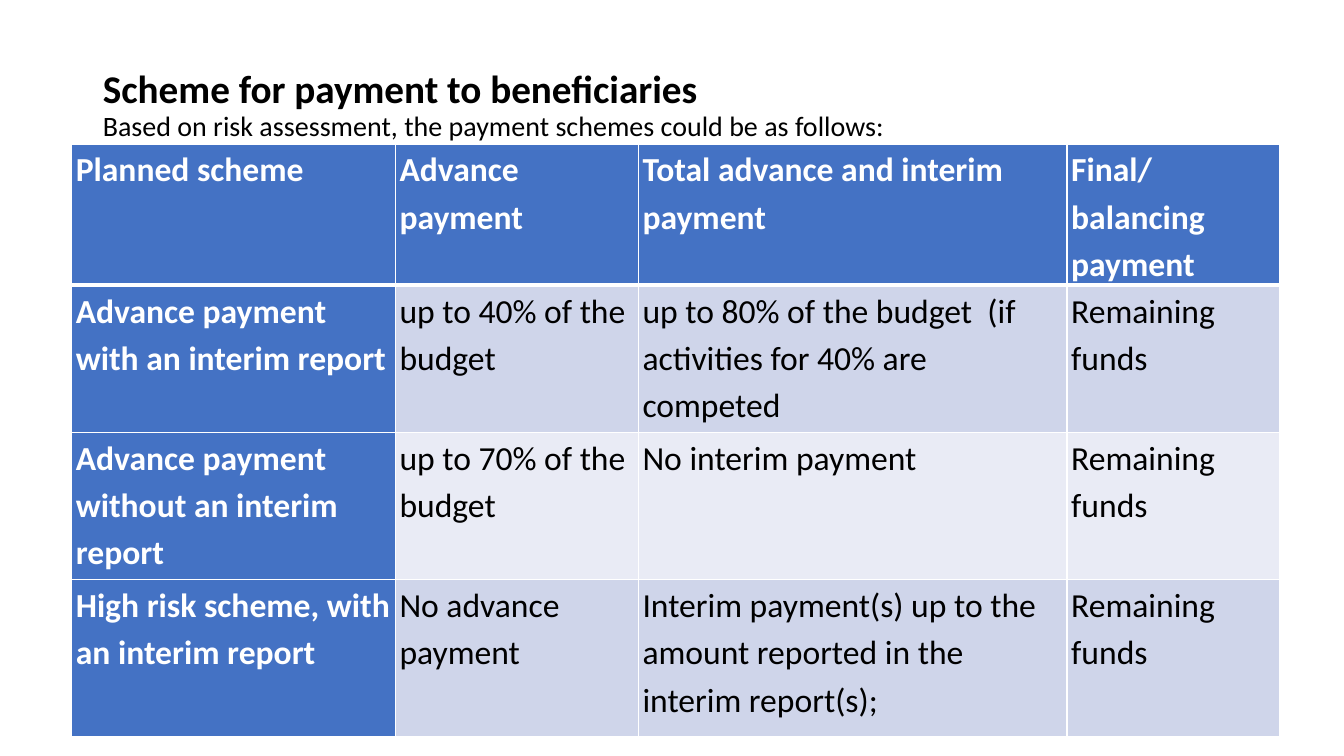
from lxml.etree import SubElement
from pptx import Presentation
from pptx.dml.color import RGBColor
from pptx.enum.text import MSO_ANCHOR as Anchor, MSO_AUTO_SIZE as AutoSize, PP_ALIGN as Align
from pptx.oxml.ns import qn
from pptx.util import Pt

WHITE, BLACK, BLUE = "FFFFFF", "000000", "4472C4"
BANDS = ["CFD5EA", "E9EBF5"]


def style(run, size, color, bold):
    run.font.name = "Calibri"
    run.font.size = Pt(size)
    run.font.bold = bold
    run.font.color.rgb = RGBColor.from_string(color)


def add_border(cell, side, width):
    line = SubElement(cell._tc.get_or_add_tcPr(), qn(f"a:ln{side}"), w=str(Pt(width)))
    fill = SubElement(line, qn("a:solidFill"))
    SubElement(fill, qn("a:srgbClr"), val=WHITE)


deck = Presentation()
deck.slide_width, deck.slide_height = Pt(960), Pt(540)
slide = deck.slides.add_slide(deck.slide_layouts[5])

# Heading and introduction
heading = slide.shapes.title
heading.left, heading.top, heading.width, heading.height = Pt(66.24), Pt(-183.6), Pt(828), Pt(519.12)
frame = heading.text_frame
frame.text = ("Scheme for payment to beneficiaries\v"
              "Based on risk assessment, the payment schemes could be as follows:")
frame.word_wrap = True
frame.auto_size = AutoSize.NONE
frame.vertical_anchor = Anchor.MIDDLE
frame.paragraphs[0].alignment = Align.LEFT
frame.paragraphs[0].line_spacing = 0.9
headline, introduction = frame.paragraphs[0].runs
style(headline, 28, BLACK, True)
style(introduction, 20, BLACK, False)

# Payment schemes
schemes = [
    ["Planned scheme", "Advance payment", "Total advance and interim payment",
     "Final/balancing payment"],
    ["Advance payment with an interim report", "up to 40% of the budget",
     "up to 80% of the budget  (if activities for 40% are competed", "Remaining funds"],
    ["Advance payment without an interim report", "up to 70% of the budget",
     "No interim payment", "Remaining funds"],
    ["High risk scheme, with an interim report", "No advance payment",
     "Interim payment(s) up to the amount reported in the interim report(s);",
     "Remaining funds"],
]
column_widths = [231.2, 173.6, 306.2, 152]
row_heights = [91.4, 105.2, 105.2, 111.8]
table = slide.shapes.add_table(4, 4, Pt(51.2), Pt(102.8),
                               Pt(sum(column_widths)), Pt(sum(row_heights))).table
for column, width in zip(table.columns, column_widths):
    column.width = Pt(width)
for row, height in zip(table.rows, row_heights):
    row.height = Pt(height)

for r, scheme in enumerate(schemes):
    for c, wording in enumerate(scheme):
        cell = table.cell(r, c)
        is_header = r == 0 or c == 0
        cell.margin_left = cell.margin_right = Pt(3)
        cell.margin_top = cell.margin_bottom = 0

        # A thick rule separates the header row from the body
        add_border(cell, "L", 1)
        add_border(cell, "R", 1)
        add_border(cell, "T", 3 if r == 1 else 1)
        add_border(cell, "B", 3 if r == 0 else 1)
        cell.fill.solid()
        cell.fill.fore_color.rgb = RGBColor.from_string(BLUE if is_header else BANDS[(r - 1) % 2])

        paragraph = cell.text_frame.paragraphs[0]
        paragraph.text = wording
        paragraph.line_spacing = 1.15
        paragraph.alignment = Align.JUSTIFY if r == 0 and c != 2 else Align.LEFT
        style(paragraph.runs[0], 24, WHITE if is_header else BLACK, is_header)

deck.save("out.pptx")
